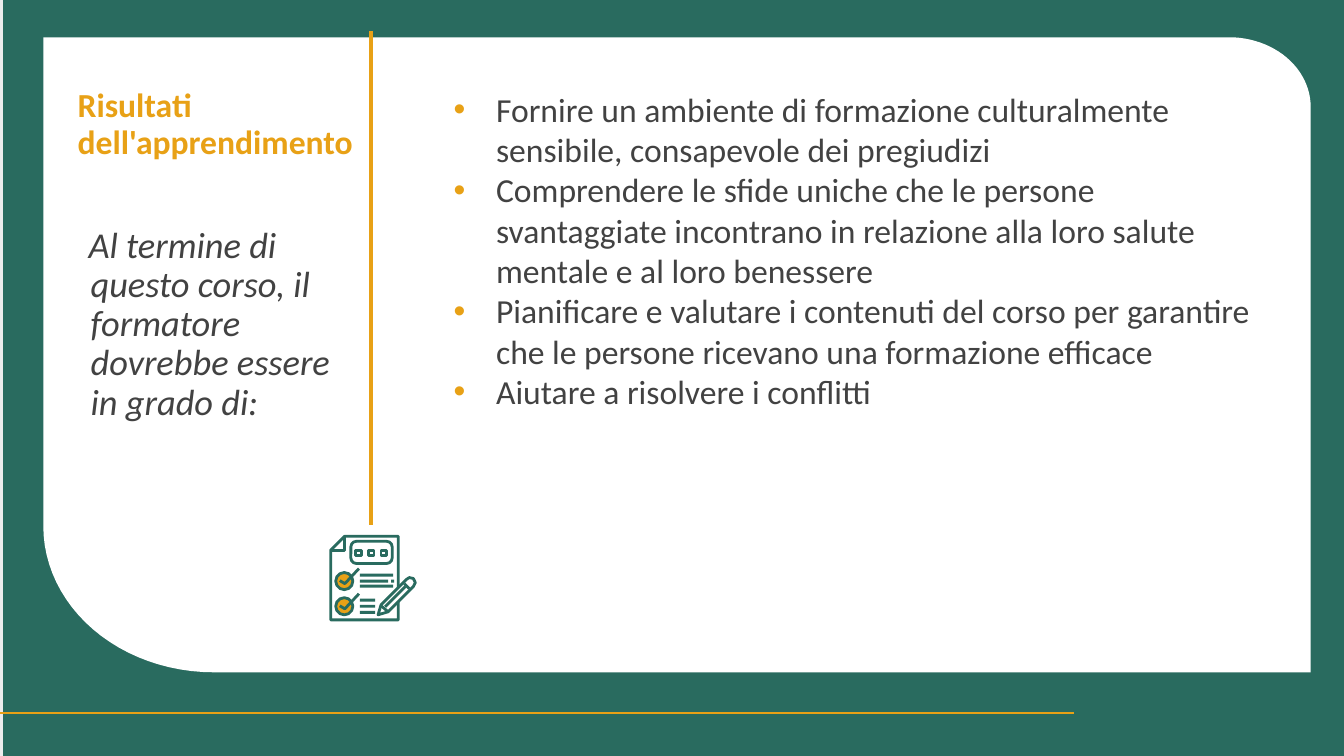
from math import cos, pi, sin

from lxml.etree import SubElement
from pptx import Presentation
from pptx.dml.color import RGBColor
from pptx.enum.shapes import MSO_CONNECTOR, MSO_SHAPE
from pptx.enum.text import MSO_ANCHOR, MSO_AUTO_SIZE, PP_ALIGN
from pptx.oxml.ns import qn
from pptx.util import Inches, Pt

GREEN = RGBColor(0x29, 0x6B, 0x5F)
GOLD = RGBColor(0xE8, 0xA1, 0x16)
GREY = RGBColor(0xEC, 0xEC, 0xEC)
DARK = RGBColor(0x42, 0x42, 0x42)
WHITE = RGBColor(0xFF, 0xFF, 0xFF)


def paint(shape, fill=None, line=None):
    shape.shadow.inherit = False
    if fill is None:
        shape.fill.background()
    else:
        shape.fill.solid()
        shape.fill.fore_color.rgb = fill
    if line is None:
        shape.line.fill.background()
    else:
        shape.line.color.rgb = line
        shape.line.width = Pt(2)
    return shape


def outline(shapes, points, close=True):
    corners = [(Inches(x), Inches(y)) for x, y in points]
    builder = shapes.build_freeform(*corners[0], scale=1.0)
    builder.add_line_segments(corners[1:], close=close)
    return builder.convert_to_shape()


deck = Presentation()
deck.slide_width, deck.slide_height = Inches(13.33), Inches(7.5)
page = deck.slides.add_slide(deck.slide_layouts[1])
heading, outcomes = page.shapes.title, page.placeholders[1]

# Green frame and grey left edge
for width, color in [(13.33, GREEN), (0.03, GREY)]:
    band = page.shapes.add_shape(MSO_SHAPE.RECTANGLE, 0, 0, Inches(width), Inches(7.5))
    paint(band, color)

# White panel with two rounded corners: centre, radii, start angle
panel_points = [(0.43, 0.37)]
steps = 24
for x, y, radius_x, radius_y, start in [(12.19, 1.06, 0.81, 0.69, -pi / 2),
                                        (2.12, 5.22, 1.69, 1.45, pi / 2)]:
    for step in range(steps + 1):
        angle = start + step * pi / 2 / steps
        panel_points.append((x + radius_x * cos(angle), y + radius_y * sin(angle)))
    if start < 0:
        panel_points.append((13, 6.67))
paint(outline(page.shapes, panel_points), WHITE)

# Gold rules
for x1, y1, x2, y2, weight in [(0, 7.07, 10.65, 7.07, 1.5), (3.68, 0.31, 3.68, 5.21, 2.75)]:
    rule = page.shapes.add_connector(MSO_CONNECTOR.STRAIGHT, Inches(x1), Inches(y1),
                                     Inches(x2), Inches(y2))
    rule.line.color.rgb = GOLD
    rule.line.width = Pt(weight)
    SubElement(rule._element.spPr, qn("a:effectLst"))

# Texts, brought in front of the panel
intro = page.shapes.add_textbox(0, 0, Inches(1), Inches(1))
texts = [
    (heading, (0.67, 0.83, 3.45, 0.88), 0.9,
     {"size": Pt(24), "bold": True, "italic": False}, GOLD,
     ["Risultati dell'apprendimento"]),
    (intro, (0.78, 2.2, 2.77, 2.13), 0.9,
     {"size": Pt(26), "bold": False, "italic": True}, DARK,
     ["Al termine di questo corso, il formatore dovrebbe essere in grado di:"]),
    (outcomes, (4.32, 0.83, 8.34, 5.61), 1.0,
     {"size": Pt(24), "bold": False, "italic": False}, DARK,
     ["Fornire un ambiente di formazione culturalmente sensibile, consapevole dei pregiudizi",
      "Comprendere le sfide uniche che le persone svantaggiate incontrano in relazione "
      "alla loro salute mentale e al loro benessere",
      "Pianificare e valutare i contenuti del corso per garantire che le persone ricevano "
      "una formazione efficace",
      "Aiutare a risolvere i conflitti"]),
]
for box, place, spacing, look, color, lines in texts:
    page.shapes._spTree.append(box._element)
    box.left, box.top, box.width, box.height = [Inches(value) for value in place]
    frame = box.text_frame
    frame.word_wrap = True
    frame.auto_size = MSO_AUTO_SIZE.NONE
    frame.vertical_anchor = MSO_ANCHOR.TOP
    for number, line in enumerate(lines):
        para = frame.add_paragraph() if number else frame.paragraphs[0]
        para.alignment = PP_ALIGN.LEFT
        para.line_spacing = spacing
        para.space_before = Pt(0)
        properties = para._p.get_or_add_pPr()
        if box is intro:
            properties.set("marL", str(Inches(0.02)))
            properties.set("indent", str(Inches(-0.02)))
        if box is outcomes:
            properties.set("marL", str(Inches(0.5)))
            properties.set("indent", str(Inches(-0.42)))
            bullet_color = SubElement(properties, qn("a:buClr"))
            SubElement(bullet_color, qn("a:srgbClr"), val=str(GOLD))
            SubElement(properties, qn("a:buFont"), typeface="Arial")
            SubElement(properties, qn("a:buChar"), char="•")
        span = para.add_run()
        span.text = line
        span.font.name = "Calibri"
        span.font.color.rgb = color
        for name, value in look.items():
            setattr(span.font, name, value)

# Checklist icon: sheet with folded corner
icon = page.shapes.add_group_shape().shapes
sheet = [(3.42, 5.32), (3.95, 5.32), (3.95, 6.15), (3.28, 6.15), (3.28, 5.46)]
paint(outline(icon, sheet), WHITE, GREEN)
paint(outline(icon, [(3.28, 5.46), (3.42, 5.46), (3.42, 5.32)], close=False), None, GREEN)

# Header frame with three squares
header = icon.add_shape(MSO_SHAPE.ROUNDED_RECTANGLE, Inches(3.48), Inches(5.37),
                        Inches(0.41), Inches(0.22))
header.adjustments[0] = 0.25
paint(header, None, GREEN)
for column in range(3):
    square = icon.add_shape(MSO_SHAPE.RECTANGLE, Inches(3.53 + 0.125 * column), Inches(5.46),
                            Inches(0.055), Inches(0.055))
    paint(square, None, GREEN)

# Ticked circles
for drop in (0, 0.25):
    circle = icon.add_shape(MSO_SHAPE.OVAL, Inches(3.33), Inches(5.68 + drop),
                            Inches(0.17), Inches(0.17))
    paint(circle, GOLD, GREEN)
    tick = [(3.37, 5.76 + drop), (3.42, 5.79 + drop), (3.56, 5.64 + drop)]
    paint(outline(icon, tick, close=False), None, GREEN)

# Lines of writing
for left, top, width in [(3.57, 5.69, 0.33), (3.57, 5.75, 0.28), (3.88, 5.75, 0.03),
                         (3.57, 5.8, 0.33), (3.57, 5.94, 0.15), (3.57, 6, 0.15),
                         (3.57, 6.06, 0.15)]:
    bar = icon.add_shape(MSO_SHAPE.RECTANGLE, Inches(left), Inches(top),
                         Inches(width), Inches(0.03))
    paint(bar, GREEN)

# Pencil
pencil = [(3.75, 6.1), (3.78, 6), (4.03, 5.75), (4.06, 5.73), (4.1, 5.74),
          (4.12, 5.78), (4.1, 5.82), (3.85, 6.07)]
paint(outline(icon, pencil), WHITE, GREEN)
for stroke in [[(3.78, 6.01), (3.85, 6.07)], [(3.82, 6.02), (4.02, 5.82)],
               [(4.01, 5.79), (4.06, 5.84)]]:
    paint(outline(icon, stroke, close=False), None, GREEN)

deck.save("out.pptx")
